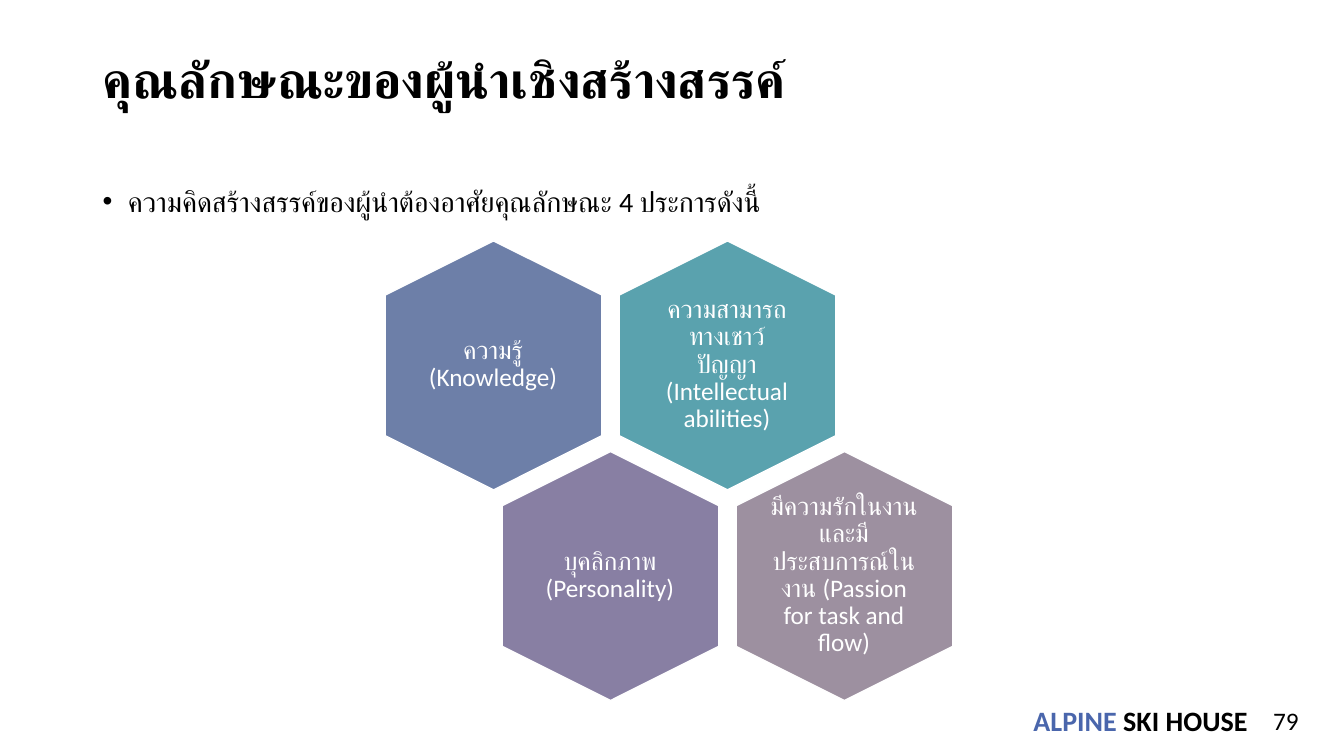
from lxml import etree
from pptx import Presentation
from pptx.dml.color import RGBColor
from pptx.enum.shapes import MSO_SHAPE
from pptx.enum.text import MSO_ANCHOR, PP_ALIGN
from pptx.oxml.ns import qn
from pptx.util import Pt

HEXAGON = MSO_SHAPE.HEXAGON
TOP, MIDDLE = MSO_ANCHOR.TOP, MSO_ANCHOR.MIDDLE
LEFT, CENTER, RIGHT = PP_ALIGN.LEFT, PP_ALIGN.CENTER, PP_ALIGN.RIGHT

EMU_PER_PX = 9144
FONT = "Calibri"
COLOURS = {
    "black": "000000",
    "white": "FFFFFF",
    "brand": "4A66AC",
    "blue": "6D7FA8",
    "teal": "5AA2AE",
    "violet": "887FA3",
    "mauve": "9D90A0",
}
HEXAGON_WIDTH, HEXAGON_HEIGHT = 247, 215
GRID_LEFT, GRID_TOP = 366, 255
COLUMN_STEP, ROW_STEP = 232, 209
LABEL_WIDTH, LABEL_HEIGHT = 148, 170
TRAITS = [
    (0, 1, "teal", 7, "ความสามารถทางเชาว์ปัญญา (Intellectual abilities)"),
    (0, 0, "blue", 0, "ความรู้ (Knowledge)"),
    (1, 0, "violet", 7, "บุคลิกภาพ (Personality)"),
    (1, 1, "mauve", 0, "มีความรักในงานและมีประสบการณ์ในงาน (Passion for task and flow)"),
]


def px(length):
    """Turn a length in px into EMU."""
    return length * EMU_PER_PX


def colour(name):
    """Return the named colour."""
    return RGBColor.from_string(COLOURS[name])


def format_run(run, size, colour_name, bold=False):
    """Set the font of a run."""
    run.font.name = FONT
    run.font.size = Pt(size)
    run.font.bold = bold
    run.font.color.rgb = colour(colour_name)


def set_insets(text_frame, inset):
    """Give all four sides of a text frame the same inset."""
    text_frame.margin_left = text_frame.margin_right = px(inset)
    text_frame.margin_top = text_frame.margin_bottom = px(inset)


def add_text(slide, box, text, size, colour_name="black", bold=False,
             align=LEFT, anchor=TOP, spacing=1.0):
    """Add a wrapping one-paragraph text box and return its text frame."""
    text_frame = slide.shapes.add_textbox(*map(px, box)).text_frame
    text_frame.word_wrap = True
    text_frame.vertical_anchor = anchor
    text_frame.text = text
    paragraph = text_frame.paragraphs[0]
    paragraph.alignment = align
    paragraph.line_spacing = spacing
    format_run(paragraph.runs[0], size, colour_name, bold)
    return text_frame


def add_bullet(paragraph, indent):
    """Give a paragraph a bullet with a hanging indent."""
    properties = paragraph._p.get_or_add_pPr()
    properties.set("marL", str(px(indent)))
    properties.set("indent", str(px(-indent)))
    etree.SubElement(properties, qn("a:buFont"), typeface="Arial")
    etree.SubElement(properties, qn("a:buChar"), char="•")


def add_trait(slide, row, column, fill, inset, text):
    """Add an upright hexagon of the honeycomb with its label."""
    left = GRID_LEFT + column * COLUMN_STEP + row * COLUMN_STEP // 2
    top = GRID_TOP + row * ROW_STEP
    hexagon = slide.shapes.add_shape(
        HEXAGON, px(left), px(top), px(HEXAGON_WIDTH), px(HEXAGON_HEIGHT))
    hexagon.rotation = 90
    hexagon.shadow.inherit = False
    hexagon.fill.solid()
    hexagon.fill.fore_color.rgb = colour(fill)
    hexagon.line.color.rgb = colour("white")
    hexagon.line.width = Pt(1)
    label_left = left + (HEXAGON_WIDTH - LABEL_WIDTH) // 2
    label_top = top + (HEXAGON_HEIGHT - LABEL_HEIGHT) // 2
    label = add_text(slide, (label_left, label_top, LABEL_WIDTH, LABEL_HEIGHT),
                     text, 18, "white", align=CENTER, anchor=MIDDLE, spacing=0.9)
    set_insets(label, inset)


def add_footer(slide):
    """Add the two-coloured house name and the slide number."""
    house = add_text(slide, (1023, 696, 218, 38), "ALPINE", 20, "brand",
                     bold=True, anchor=MIDDLE)
    house.word_wrap = False
    set_insets(house, 2)
    run = house.paragraphs[0].add_run()
    run.text = " SKI HOUSE"
    format_run(run, 20, "black", bold=True)
    add_text(slide, (1242, 695, 56, 40), "79", 18, align=RIGHT)


def main():
    """Build the slide and save it."""
    presentation = Presentation()
    presentation.slide_width = px(1333)
    presentation.slide_height = px(750)
    slide = presentation.slides.add_slide(presentation.slide_layouts[6])
    add_text(slide, (92, 47, 1150, 70), "คุณลักษณะของผู้นำเชิงสร้างสรรค์", 36,
             bold=True, anchor=MIDDLE, spacing=0.9)
    body = add_text(slide, (92, 171, 1150, 525),
                    "ความคิดสร้างสรรค์ของผู้นำต้องอาศัยคุณลักษณะ 4 ประการดังนี้",
                    20, spacing=1.2)
    add_bullet(body.paragraphs[0], 25)
    for trait in TRAITS:
        add_trait(slide, *trait)
    add_footer(slide)
    presentation.save("out.pptx")


if __name__ == "__main__":
    main()
